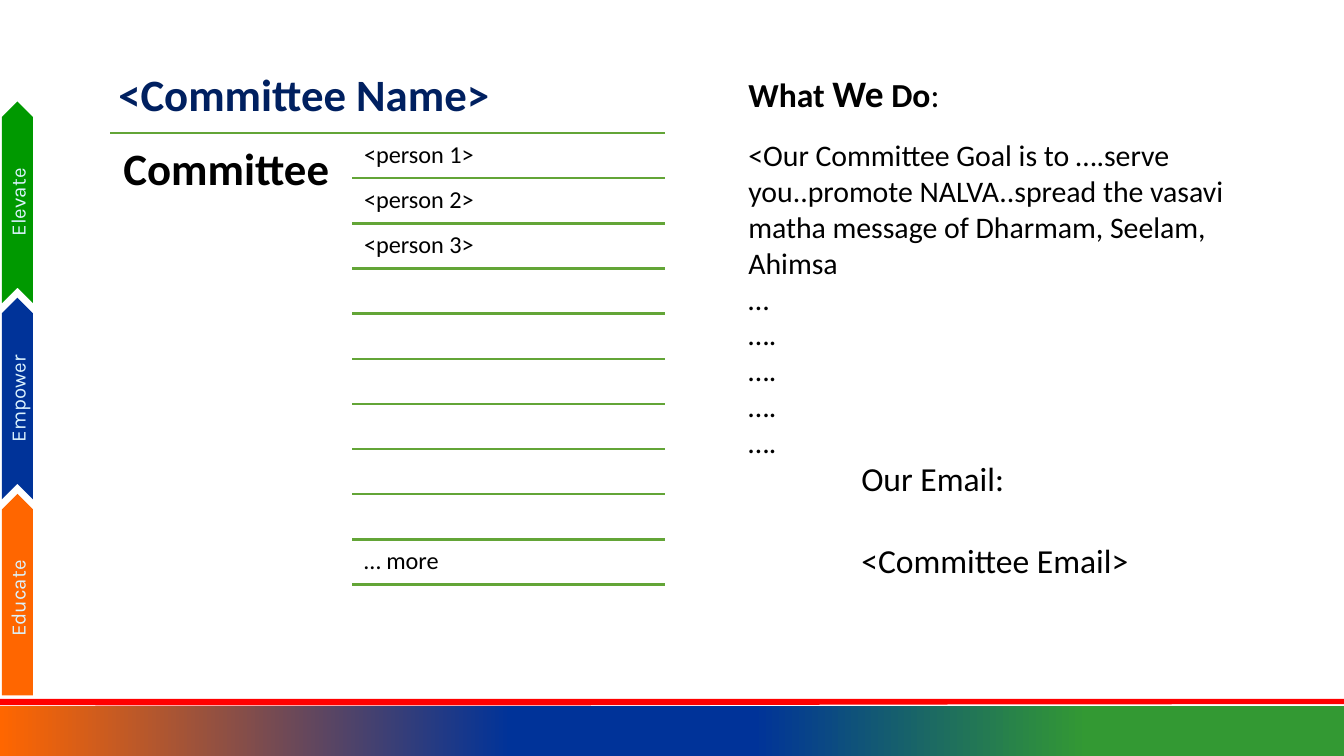
from dataclasses import dataclass

from lxml import etree
from pptx import Presentation
from pptx.dml.color import RGBColor
from pptx.enum import shapes, text
from pptx.oxml.ns import qn
from pptx.util import Inches, Pt


@dataclass(frozen=True)
class Theme:
    font: str = "Calibri"
    tab_font: str = "Karla"
    ink: str = "000000"
    title: str = "002060"
    tab_text: str = "DCF3FE"
    rule: str = "63A537"
    red: str = "FF0000"
    blue: str = "003399"
    green: str = "009900"
    orange: str = "FF6600"
    footer_green: str = "339933"
    heading_size: int = 24
    subheading_size: int = 18
    accent_size: int = 20
    body_size: int = 16
    row_size: int = 13
    tab_size: int = 11
    rule_width: float = 1.25


class SlideBuilder:
    def __init__(self, slide, theme):
        self.slide = slide
        self.theme = theme

    def add_run(self, paragraph, words, size, color=None, bold=False, font=None):
        run = paragraph.add_run()
        run.text = words
        run.font.name = font or self.theme.font
        run.font.size = Pt(size)
        run.font.bold = bold
        run.font.color.rgb = RGBColor.from_string(color or self.theme.ink)

    def set_insets(self, frame, horizontal, vertical):
        frame.margin_left = frame.margin_right = Inches(horizontal)
        frame.margin_top = frame.margin_bottom = Inches(vertical)

    def shape(self, kind, left, top, width, height, color=None):
        shape = self.slide.shapes.add_shape(
            kind, Inches(left), Inches(top), Inches(width), Inches(height))
        shape.shadow.inherit = False
        shape.line.fill.background()
        if color:
            shape.fill.solid()
            shape.fill.fore_color.rgb = RGBColor.from_string(color)
        return shape

    def gradient_bar(self, left, top, width, height, stops):
        shape = self.shape(shapes.MSO_SHAPE.RECTANGLE, left, top, width, height)
        shape.fill.gradient()
        shape.fill.gradient_angle = 0
        stop_list = shape.element.spPr.find(qn("a:gradFill")).find(qn("a:gsLst"))
        for old_stop in list(stop_list):
            stop_list.remove(old_stop)
        for percent, color in stops:
            stop = etree.SubElement(stop_list, qn("a:gs"), pos=str(percent * 1000))
            etree.SubElement(stop, qn("a:srgbClr"), val=color)

    def side_tab(self, kind, top, label, color):
        shape = self.shape(kind, -0.62, top, 1.5, 0.23, color)
        shape.rotation = 270
        frame = shape.text_frame
        self.set_insets(frame, 0.07, 0.04)
        frame.vertical_anchor = text.MSO_ANCHOR.MIDDLE
        paragraph = frame.paragraphs[0]
        paragraph.alignment = text.PP_ALIGN.CENTER
        self.add_run(paragraph, label, self.theme.tab_size, self.theme.tab_text,
                     font=self.theme.tab_font)

    def rule(self, left, right, y):
        line = self.slide.shapes.add_connector(
            shapes.MSO_CONNECTOR.STRAIGHT,
            Inches(left), Inches(y), Inches(right), Inches(y))
        line.line.color.rgb = RGBColor.from_string(self.theme.rule)
        line.line.width = Pt(self.theme.rule_width)
        etree.SubElement(line.element.spPr, qn("a:effectLst"))

    def text_box(self, left, top, width, height, paragraphs, insets=(0.1, 0.05),
                 wrap=True, grow=False, line_spacing=None, gap=0):
        """Each paragraph is a list of runs: (words, size[, color[, bold]])."""
        box = self.slide.shapes.add_textbox(
            Inches(left), Inches(top), Inches(width), Inches(height))
        frame = box.text_frame
        frame.word_wrap = wrap
        if grow:
            frame.auto_size = text.MSO_AUTO_SIZE.SHAPE_TO_FIT_TEXT
        self.set_insets(frame, *insets)
        for index, runs in enumerate(paragraphs):
            paragraph = frame.add_paragraph() if index else frame.paragraphs[0]
            if line_spacing:
                paragraph.line_spacing = line_spacing
            if index and gap:
                paragraph.space_before = Pt(gap)
            for run in runs:
                self.add_run(paragraph, *run)


def main():
    presentation = Presentation()
    # Widescreen, 16:9
    presentation.slide_width = Inches(10)
    presentation.slide_height = Inches(10) * 9 // 16
    slide = presentation.slides.add_slide(presentation.slide_layouts[6])
    theme = Theme()
    builder = SlideBuilder(slide, theme)

    # Footer band
    builder.gradient_bar(0, 5.25, 10, 0.38, [
        (0, theme.orange), (38, theme.blue), (56, theme.blue),
        (81, theme.footer_green), (100, theme.footer_green)])
    builder.shape(shapes.MSO_SHAPE.FLOWCHART_DOCUMENT, 0, 5.2, 10, 0.05, theme.red)

    # Side tabs
    chevron, pentagon = shapes.MSO_SHAPE.CHEVRON, shapes.MSO_SHAPE.PENTAGON
    tabs = [(chevron, "Elevate", theme.green), (chevron, "Empower", theme.blue),
            (pentagon, "Educate", theme.orange)]
    for index, (kind, label, color) in enumerate(tabs):
        builder.side_tab(kind, 1.39 + 1.46 * index, label, color)

    # Committee list: ten equal rows under a full-width rule
    left, names_left, right = 0.82, 2.62, 4.95
    top, bottom, row_count = 0.99, 4.35, 10
    pitch = (bottom - top) / row_count
    members = {0: "<person 1>", 1: "<person 2>", 2: "<person 3>", 9: "… more"}
    builder.rule(left, right, top)
    builder.text_box(left, top, 1.79, 3.37,
                     [[("Committee", theme.heading_size, theme.ink, True)]],
                     insets=(0.1, 0.1), line_spacing=0.9)
    for row in range(row_count):
        row_top = top + pitch * row
        if row in members:
            builder.text_box(2.66, row_top + 0.02, 2.28, 0.32,
                             [[(members[row], theme.row_size)]],
                             insets=(0.05, 0.05), line_spacing=0.9)
        builder.rule(names_left, right, row_top + pitch)

    # Headings
    builder.text_box(left, 0.47, 4.12, 0.46,
                     [[("<Committee Name>", theme.heading_size, theme.title, True)]],
                     insets=(0.06, 0.03), grow=True)
    builder.text_box(5.47, 0.47, 1.67, 0.44, [[
        ("What ", theme.subheading_size, theme.ink, True),
        ("We", theme.accent_size, theme.ink, True),
        (" Do", theme.subheading_size, theme.ink, True),
        (":", theme.subheading_size)]], grow=True)

    # Contact
    builder.text_box(6.31, 3.36, 2.22, 1.01,
                     [[("Our Email:", theme.subheading_size)],
                      [("<Committee Email>", theme.subheading_size)]],
                     wrap=False, grow=True, gap=22)

    # Goal
    goal = ("<Our Committee Goal is to ….serve you..promote NALVA..spread the "
            "vasavi matha message of Dharmam, Seelam, Ahimsa")
    builder.text_box(5.47, 0.97, 4.2, 2.52,
                     [[(words, theme.body_size)] for words in [goal, "…"] + ["…."] * 4],
                     grow=True)

    presentation.save("out.pptx")


if __name__ == "__main__":
    main()
